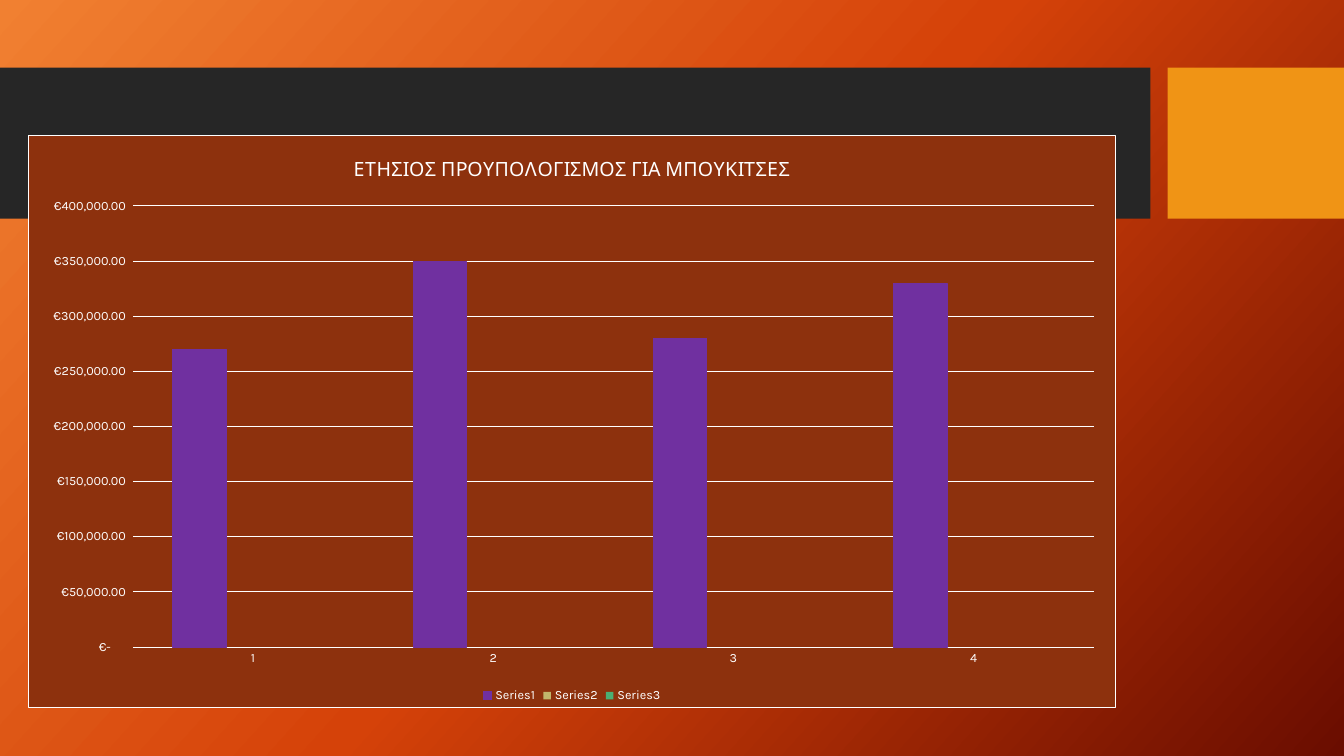
from copy import deepcopy

from lxml import etree
from pptx import Presentation
from pptx.chart.data import CategoryChartData
from pptx.dml.color import RGBColor
from pptx.enum.chart import XL_CHART_TYPE, XL_LEGEND_POSITION, XL_TICK_MARK
from pptx.enum.shapes import MSO_SHAPE
from pptx.oxml import parse_xml
from pptx.oxml.ns import nsdecls, qn
from pptx.util import Inches, Pt

# Content
TITLE = "ΕΤΗΣΙΟΣ ΠΡΟΥΠΟΛΟΓΙΣΜΟΣ ΓΙΑ ΜΠΟΥΚΙΤΣΕΣ"
QUARTERS = ["1", "2", "3", "4"]
EURO_FORMAT = '_("€"* #,##0.00_);_("€"* \\(#,##0.00\\);_("€"* "-"??_);_(@_)'
FONT = "Karla"

WHITE = RGBColor(0xFF, 0xFF, 0xFF)
CHARCOAL = RGBColor(0x26, 0x26, 0x26)
AMBER = RGBColor(0xF0, 0x94, 0x15)
BROWN = RGBColor(0x8D, 0x31, 0x0D)
PURPLE = RGBColor(0x70, 0x30, 0xA0)
SAND = RGBColor(0xC1, 0xB5, 0x6B)
GREEN = RGBColor(0x4B, 0xAF, 0x73)
GRADIENT = [
    (0, RGBColor(0xF1, 0x80, 0x31)),
    (0.5, RGBColor(0xD5, 0x42, 0x09)),
    (1, RGBColor(0x6A, 0x0D, 0x00)),
]

SERIES = [
    ("Series1", [270000, 350000, 280000, 330000], PURPLE),
    ("Series2", [None] * 4, SAND),
    ("Series3", [None] * 4, GREEN),
]
BANDS = [(0, 11.41, CHARCOAL), (11.58, 1.75, AMBER)]  # left, width, colour
BAND_TOP, BAND_HEIGHT = 0.67, 1.5
CHART_BOX = (0.28, 1.34, 10.79, 5.68)


def style_font(font, size):
    font.size = Pt(size)
    font.name = FONT
    font.bold = False
    font.color.rgb = WHITE


deck = Presentation()
deck.slide_width, deck.slide_height = Inches(13.33), Inches(7.5)
page = deck.slides.add_slide(deck.slide_layouts[6])

# Background gradient
fill = page.background.fill
fill.gradient()
fill.gradient_angle = 360 - 42
stop_list = page.element.find(".//" + qn("a:gsLst"))
stop_list.append(deepcopy(stop_list[0]))
for stop, (position, colour) in zip(fill.gradient_stops, GRADIENT):
    stop.position = position
    stop.color.rgb = colour

# Header bands
for left, width, colour in BANDS:
    band = page.shapes.add_shape(
        MSO_SHAPE.RECTANGLE, Inches(left), Inches(BAND_TOP),
        Inches(width), Inches(BAND_HEIGHT))
    band.shadow.inherit = False
    band.fill.solid()
    band.fill.fore_color.rgb = colour
    band.line.fill.background()

# Budget chart
data = CategoryChartData()
data.categories = QUARTERS
for name, values, _ in SERIES:
    data.add_series(name, values)
chart = page.shapes.add_chart(
    XL_CHART_TYPE.COLUMN_CLUSTERED, *map(Inches, CHART_BOX), data).chart
style_font(chart.font, 10)

chart.has_title = True
chart.chart_title.include_in_layout = False
title = chart.chart_title.text_frame
title.text = TITLE
style_font(title.paragraphs[0].runs[0].font, 14)

chart.has_legend = True
chart.legend.position = XL_LEGEND_POSITION.BOTTOM
chart.legend.include_in_layout = False
style_font(chart.legend.font, 9)

# Columns
plot = chart.plots[0]
plot.gap_width = 150
plot.overlap = 0
plot.vary_by_categories = False
for series, (_, _, colour) in zip(plot.series, SERIES):
    series.format.fill.solid()
    series.format.fill.fore_color.rgb = colour
budget_line = plot.series[0].format.line
budget_line.color.rgb = PURPLE
budget_line.width = Pt(0.75)

# Axes
for axis in (chart.category_axis, chart.value_axis):
    axis.major_tick_mark = axis.minor_tick_mark = XL_TICK_MARK.NONE
    axis.format.line.fill.background()
    style_font(axis.tick_labels.font, 9)
amounts = chart.value_axis
amounts.minimum_scale, amounts.maximum_scale = 0, 400000
amounts.major_unit = 50000
amounts.tick_labels.number_format = EURO_FORMAT
amounts.tick_labels.number_format_is_linked = False
amounts.has_major_gridlines = True
amounts.major_gridlines.format.line.color.rgb = WHITE
amounts.major_gridlines.format.line.width = Pt(0.75)

# Chart area fill and border
area = parse_xml(f"<c:spPr {nsdecls('c', 'a')}/>")
border = etree.Element(qn("a:ln"), w=str(Pt(0.75)))
for parent, colour in ((area, BROWN), (border, WHITE)):
    solid = etree.SubElement(parent, qn("a:solidFill"))
    etree.SubElement(solid, qn("a:srgbClr"), val=str(colour))
area.append(border)
chart.element.find(qn("c:chart")).addnext(area)

deck.save("out.pptx")
